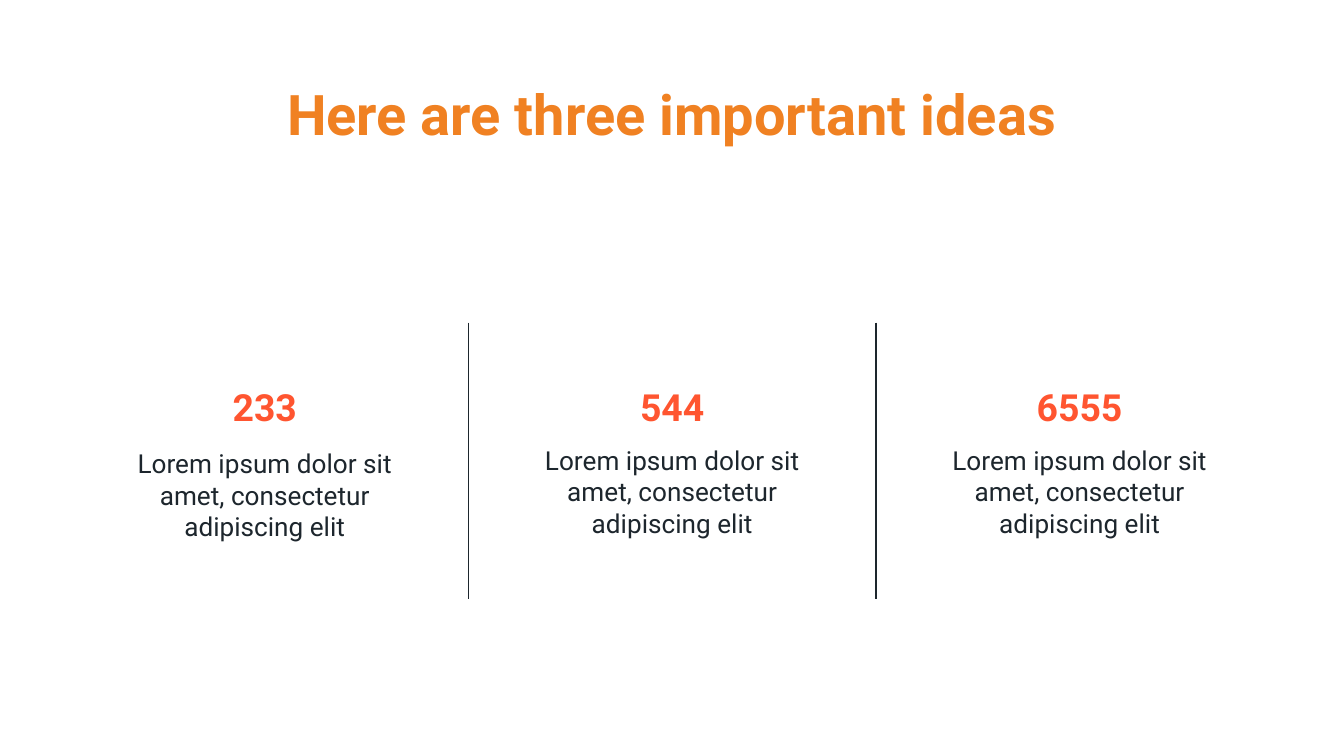
from pptx import Presentation
from pptx.dml.color import RGBColor
from pptx.enum.shapes import MSO_CONNECTOR as Conn
from pptx.enum.text import MSO_ANCHOR as Anchor, PP_ALIGN as Align
from pptx.oxml.ns import qn
from pptx.util import Cm, Pt
from lxml.etree import SubElement

# Content
TITLE = "Here are three important ideas"
LOREM = "Lorem ipsum dolor sit amet, consectetur adipiscing elit"
IDEAS = [
    ("233", LOREM, Anchor.MIDDLE),
    ("544", LOREM, Anchor.TOP),
    ("6555", LOREM, Anchor.TOP),
]


def color(code):
    return RGBColor.from_string(code)


# Formats
INK = color("1D262D")
HEAD = {"size": Pt(30), "bold": True, "color": color("F08122")}
COUNT = {"size": Pt(20), "bold": True, "color": color("FF5530")}
BODY = {"size": Pt(14), "bold": False, "color": INK}

# Column grid, in cm
LEFT, WIDTH, GAP = 1.98, 6.05, 1.65
TOP, BOTTOM = 6.1, 11.33

deck = Presentation()
deck.slide_width, deck.slide_height = Cm(25.4), Cm(14.29)
slide = deck.slides.add_slide(deck.slide_layouts[6])


def add_text(text, place, style, anchor):
    box = slide.shapes.add_textbox(*map(Cm, place))
    frame = box.text_frame
    frame.word_wrap = True
    frame.vertical_anchor = anchor
    for side in ("left", "top", "right", "bottom"):
        setattr(frame, f"margin_{side}", Cm(0.25))
    para = frame.paragraphs[0]
    para.alignment = Align.CENTER
    run = para.add_run()
    run.text = text
    run.font.name = "Roboto"
    for name, value in style.items():
        if name == "color":
            run.font.color.rgb = value
        else:
            setattr(run.font, name, value)


def add_rule(x):
    rule = slide.shapes.add_connector(
        Conn.STRAIGHT, Cm(x), Cm(TOP), Cm(x), Cm(BOTTOM))
    rule.line.width = Pt(0.75)
    rule.line.color.rgb = INK
    SubElement(rule._element.spPr, qn("a:effectLst"))


# Title
add_text(TITLE, (2, 1.25, 21.4, 1.6), HEAD, Anchor.TOP)

# Columns, with a rule in the middle of each gap
for i, (count, body, anchor) in enumerate(IDEAS):
    x = LEFT + i * (WIDTH + GAP)
    add_text(body, (x, 8.15, WIDTH, 2.41), BODY, anchor)
    add_text(count, (x, 6.88, WIDTH, 1.47), COUNT, Anchor.BOTTOM)
    if i:
        add_rule(x - GAP / 2)

deck.save("out.pptx")
